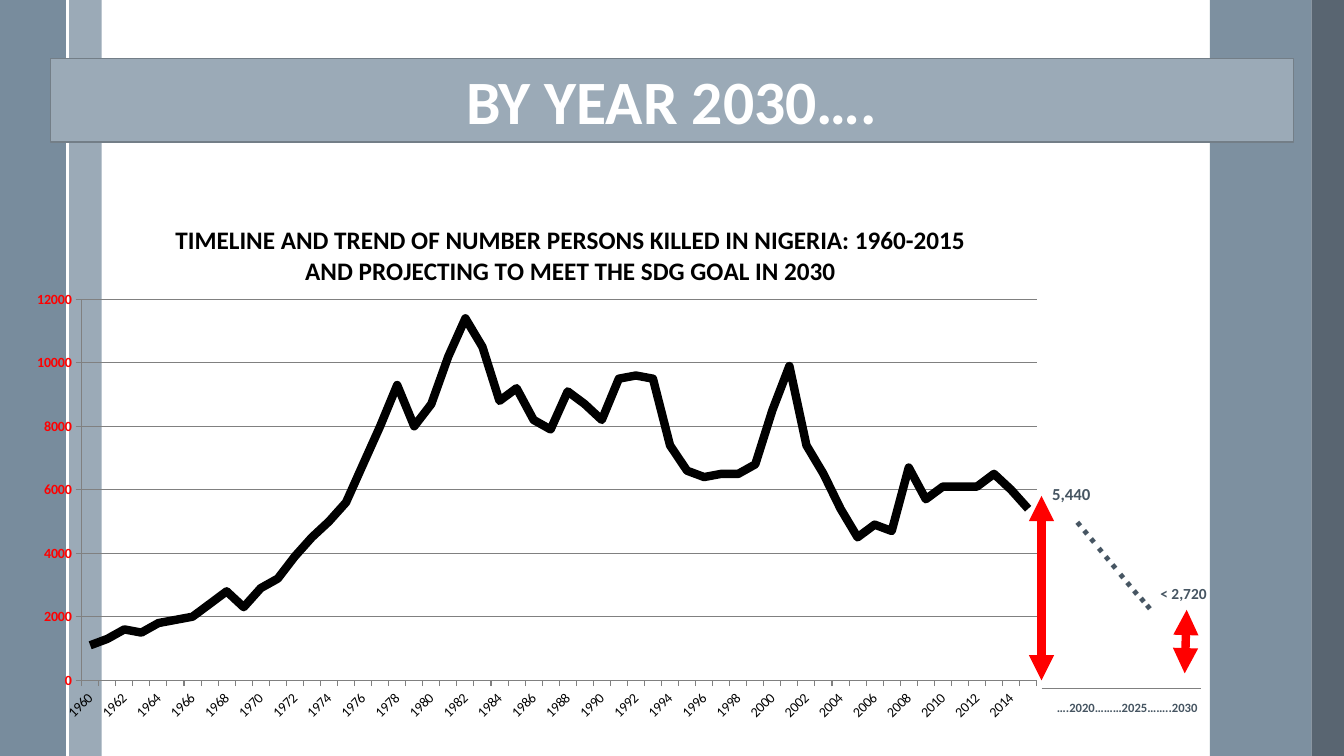
from dataclasses import dataclass
from typing import Any, Optional

import pptx
import pptx.chart.data
import pptx.dml.color
import pptx.enum.chart
import pptx.enum.shapes
import pptx.enum.text
import pptx.oxml
import pptx.oxml.ns
import pptx.util

Inches = pptx.util.Inches
Pt = pptx.util.Pt
RGBColor = pptx.dml.color.RGBColor
Align = pptx.enum.text.PP_ALIGN
qn = pptx.oxml.ns.qn

WHITE = RGBColor(0xFF, 0xFF, 0xFF)
BLACK = RGBColor(0x00, 0x00, 0x00)
RED = RGBColor(0xFF, 0x00, 0x00)
GREY = RGBColor(0x80, 0x80, 0x80)
MIST = RGBColor(0x9B, 0xAA, 0xB7)
STEEL = RGBColor(0x6A, 0x80, 0x93)
SLATE = RGBColor(0x47, 0x55, 0x62)
BANNER_EDGE = RGBColor(0x73, 0x7E, 0x87)
LABEL = RGBColor(0x46, 0x55, 0x62)

FIRST_YEAR = 1960
KILLED = [
    1100, 1300, 1600, 1500, 1800, 1900, 2000, 2400, 2800, 2300,
    2900, 3200, 3900, 4500, 5000, 5600, 6800, 8000, 9300, 8000,
    8700, 10200, 11400, 10500, 8800, 9200, 8200, 7900, 9100, 8700,
    8200, 9500, 9600, 9500, 7400, 6600, 6400, 6500, 6500, 6800,
    8500, 9900, 7400, 6500, 5400, 4500, 4900, 4700, 6700, 5700,
    6100, 6100, 6100, 6500, 6000, 5400,
]
HEADING = [
    "TIMELINE AND TREND OF NUMBER PERSONS KILLED IN NIGERIA: 1960-2015",
    "AND PROJECTING TO MEET THE SDG GOAL IN 2030",
]


@dataclass
class Band:
    left: float
    width: float
    color: RGBColor
    opacity: int = 100


@dataclass
class Rule:
    start: tuple[float, float]
    end: tuple[float, float]
    color: RGBColor
    weight: float
    arrows: bool = False


@dataclass
class Note:
    box: tuple[float, float, float, float]
    text: str
    size: int
    align: Any = Align.LEFT
    font: str = "Calibri"
    rotation: float = 0
    wrap: bool = True


BANDS = [
    Band(0.68, 0.33, MIST),
    Band(0, 0.67, STEEL, 90),
    Band(12, 1.01, STEEL, 87),
    Band(13.01, 0.33, SLATE, 90),
]
BAND_RULE = Rule((0.67, 0), (0.67, 7.5), WHITE, 1.5)
PROJECTION_RULES = [
    Rule((10.33, 4.92), (10.33, 6.75), RED, 6, True),
    Rule((11.77, 6.05), (11.75, 6.68), RED, 6, True),
    Rule((10.33, 6.83), (11.91, 6.83), GREY, 0.5),
]
NOTES = [
    Note((11.41, 5.75, 0.67, 0.29), "< 2,720", 11),
    Note((10.25, 4.75, 0.75, 0.3), "5,440", 12, Align.CENTER),
    Note((10.37, 6.89, 1.62, 0.25), "….2020………2025……..2030", 9, Align.CENTER),
    Note((10.43, 5.3, 1.4, 0.5), "………..", 24, font="Arial", rotation=50.2, wrap=False),
]


def style_font(font: Any, color: RGBColor, **values: Any) -> None:
    for key, value in values.items():
        setattr(font, key, value)
    font.color.rgb = color


def draw_band(slide: Any, band: Band) -> None:
    stripe = slide.shapes.add_shape(
        pptx.enum.shapes.MSO_SHAPE.RECTANGLE,
        Inches(band.left), 0, Inches(band.width), Inches(7.5))
    stripe.shadow.inherit = False
    stripe.fill.solid()
    stripe.fill.fore_color.rgb = band.color
    stripe.line.fill.background()
    if band.opacity < 100:
        color = stripe.element.spPr.find(qn("a:solidFill"))[0]
        color.makeelement
        alpha = pptx.oxml.ns.qn("a:alpha")
        color.append(color.makeelement(alpha, {"val": str(band.opacity * 1000)}))


def draw_rule(slide: Any, rule: Rule) -> None:
    line = slide.shapes.add_connector(
        pptx.enum.shapes.MSO_CONNECTOR.STRAIGHT,
        *(Inches(value) for value in rule.start + rule.end))
    line.line.color.rgb = rule.color
    line.line.width = Pt(rule.weight)
    if rule.arrows:
        outline = line.line._get_or_add_ln()
        for end in ("a:headEnd", "a:tailEnd"):
            outline.append(outline.makeelement(qn(end), {"type": "triangle"}))
    properties = line.element.spPr
    properties.append(properties.makeelement(qn("a:effectLst"), {}))


def draw_note(slide: Any, note: Note) -> None:
    box = slide.shapes.add_textbox(*(Inches(value) for value in note.box))
    box.rotation = note.rotation
    box.text_frame.word_wrap = note.wrap
    box.text_frame.auto_size = pptx.enum.text.MSO_AUTO_SIZE.SHAPE_TO_FIT_TEXT
    paragraph = box.text_frame.paragraphs[0]
    paragraph.text = note.text
    paragraph.alignment = note.align
    style_font(paragraph.runs[0].font, LABEL, name=note.font, size=Pt(note.size), bold=True)


def draw_banner(slide: Any) -> None:
    banner = slide.shapes.title
    parent = banner.element.getparent()
    parent.append(banner.element)
    places = {"left": 0.5, "top": 0.58, "width": 12.33, "height": 0.83}
    for key, value in places.items():
        setattr(banner, key, Inches(value))
    banner.fill.solid()
    banner.fill.fore_color.rgb = MIST
    banner.line.color.rgb = BANNER_EDGE
    banner.line.width = Pt(1)
    frame = banner.text_frame
    frame.text = "BY YEAR 2030…."
    frame.auto_size = pptx.enum.text.MSO_AUTO_SIZE.NONE
    frame.vertical_anchor = pptx.enum.text.MSO_ANCHOR.MIDDLE
    frame.paragraphs[0].alignment = Align.CENTER
    style_font(frame.paragraphs[0].runs[0].font, WHITE, name="Calibri", size=Pt(44), bold=True)


def make_layout(inner: bool, **places: float) -> Any:
    modes = {"xMode": "edge", "yMode": "edge"}
    target = '<c:layoutTarget val="inner"/>' if inner else ""
    values = "".join(f'<c:{key} val="{value}"/>' for key, value in {**modes, **places}.items())
    return pptx.oxml.parse_xml(
        f'<c:layout {pptx.oxml.ns.nsdecls("c")}><c:manualLayout>'
        f"{target}{values}</c:manualLayout></c:layout>")


def set_layout(element: Any, layout: Any, position: int) -> None:
    for old in element.findall(qn("c:layout")):
        element.remove(old)
    element.insert(position, layout)


def draw_timeline(slide: Any) -> None:
    data = pptx.chart.data.CategoryChartData()
    data.categories = [str(FIRST_YEAR + step) for step in range(len(KILLED))]
    data.add_series("Series 1", KILLED)
    chart = slide.shapes.add_chart(
        pptx.enum.chart.XL_CHART_TYPE.LINE,
        Inches(0.16), Inches(1.92), Inches(10.33), Inches(5.33), data).chart
    chart.has_legend = False
    style_font(chart.font, BLACK, name="Calibri", size=Pt(10))

    heading = chart.chart_title.text_frame
    heading.text = "\n".join(HEADING)
    for paragraph in heading.paragraphs:
        paragraph.alignment = Align.CENTER
        style_font(paragraph.runs[0].font, BLACK, name="Calibri", size=Pt(18), bold=True)
    set_layout(chart.chart_title._element, make_layout(False, x=0.15, y=0.05), 1)
    plot_area = chart._chartSpace.chart.plotArea
    set_layout(plot_area, make_layout(True, x=0.063, y=0.197, w=0.917, h=0.709), 0)

    chart.plots[0].vary_by_categories = False
    killed = chart.plots[0].series[0]
    killed.smooth = False
    killed.format.line.color.rgb = BLACK
    killed.format.line.width = Pt(6)
    killed.marker.style = pptx.enum.chart.XL_MARKER_STYLE.NONE

    years, counts = chart.category_axis, chart.value_axis
    for axis, color, bold in ((years, BLACK, False), (counts, RED, True)):
        axis.major_tick_mark = pptx.enum.chart.XL_TICK_MARK.OUTSIDE
        axis.format.line.color.rgb = GREY
        style_font(axis.tick_labels.font, color, name="Calibri", size=Pt(10), bold=bold)
    years._element.find(qn("c:txPr")).find(qn("a:bodyPr")).set("rot", "-2700000")
    skip = years._element.makeelement(qn("c:tickLblSkip"), {"val": "2"})
    years._element.find(qn("c:noMultiLvlLbl")).addprevious(skip)
    scale = {"minimum_scale": 0, "maximum_scale": 12000, "major_unit": 2000}
    for key, value in scale.items():
        setattr(counts, key, value)
    counts.major_gridlines.format.line.color.rgb = GREY


def main() -> None:
    deck = pptx.Presentation()
    deck.slide_width, deck.slide_height = Inches(13.33), Inches(7.5)
    slide = deck.slides.add_slide(deck.slide_layouts[5])
    for band in BANDS:
        draw_band(slide, band)
    draw_rule(slide, BAND_RULE)
    draw_timeline(slide)
    draw_banner(slide)
    for rule in PROJECTION_RULES:
        draw_rule(slide, rule)
    for note in NOTES:
        draw_note(slide, note)
    deck.save("out.pptx")


if __name__ == "__main__":
    main()
